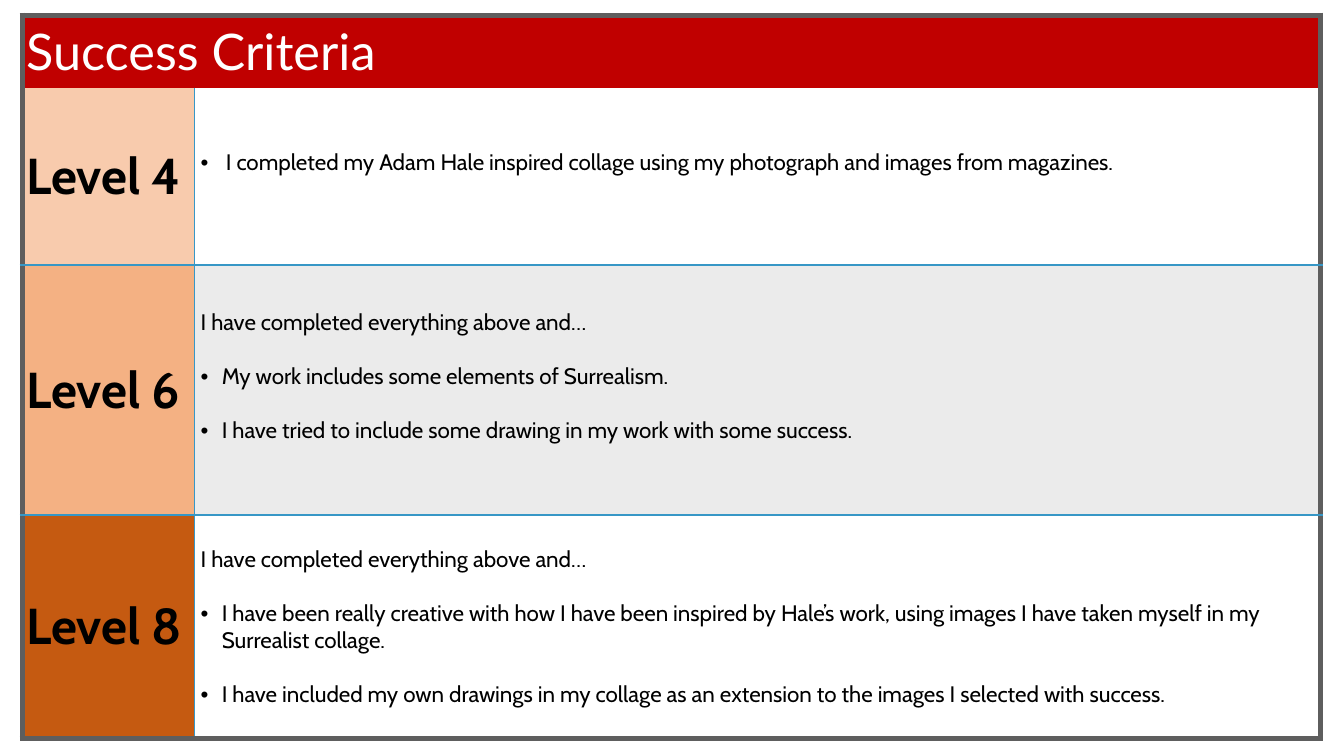
import pptx
import pptx.dml.color
import pptx.enum.text
import pptx.oxml
import pptx.oxml.ns
import pptx.util

Inches, Pt = pptx.util.Inches, pptx.util.Pt
FRAME, RULE = ("5E5E5E", 4), ("3797C6", 1)
NO_GRID_STYLE = "{2D5ABB26-0587-4C30-8999-92F81FD0307C}"
LINE = 0.27
INTRO = "I have completed everything above and…"

LEVELS = [
    ("Level 4", "F8CBAD", None, None, 0.25, [
        "I completed my Adam Hale inspired collage using my photograph and images from magazines.",
    ]),
    ("Level 6", "F4B183", "EBEBEB", INTRO, 0.21, [
        "My work includes some elements of Surrealism.",
        "I have tried to include some drawing in my work with some success.",
    ]),
    ("Level 8", "C55A11", None, INTRO, 0.21, [
        "I have been really creative with how I have been inspired by Hale’s work, "
        "using images I have taken myself in my Surrealist collage.",
        "I have included my own drawings in my collage as an extension to the images "
        "I selected with success.",
    ]),
]


def style_cell(cell, fill, margin, bottom=0, **borders):
    """Set borders (L, R, T, B as colour and width), fill, margins and anchor."""
    properties = cell._tc.get_or_add_tcPr()
    for side in "LRTB":
        color, width = borders.get(side, (None, 0))
        paint = f'<a:solidFill><a:srgbClr val="{color}"/></a:solidFill>' if color else "<a:noFill/>"
        properties.append(pptx.oxml.parse_xml(
            f'<a:ln{side} {pptx.oxml.ns.nsdecls("a")} w="{Pt(width)}">{paint}</a:ln{side}>'))
    if fill:
        cell.fill.solid()
        cell.fill.fore_color.rgb = pptx.dml.color.RGBColor.from_string(fill)
    else:
        cell.fill.background()
    cell.margin_left = cell.margin_right = cell.margin_top = Inches(margin)
    cell.margin_bottom = Inches(margin + bottom)
    cell.vertical_anchor = pptx.enum.text.MSO_ANCHOR.MIDDLE


def write(para, text, size=16, font="Cabin", color="000000", bold=False, before=0, bullet_indent=0):
    span = para.add_run()
    span.text = text
    span.font.size, span.font.name, span.font.bold = Pt(size), font, bold
    span.font.color.rgb = pptx.dml.color.RGBColor.from_string(color)
    para.space_before = Inches(before)
    if bullet_indent:
        properties = para._p.get_or_add_pPr()
        properties.set("marL", str(Inches(bullet_indent)))
        properties.set("indent", str(-Inches(bullet_indent)))
        for bullet in ('<a:buFont {} typeface="Arial"/>', '<a:buChar {} char="•"/>'):
            properties.append(pptx.oxml.parse_xml(bullet.format(pptx.oxml.ns.nsdecls("a"))))


deck = pptx.Presentation()
deck.slide_width, deck.slide_height = Inches(13.33), Inches(7.5)
page = deck.slides.add_slide(deck.slide_layouts[6])

widths, heights = [1.71, 11.17], [0.72, 1.76, 2.48, 2.22]
table = page.shapes.add_table(
    len(heights), len(widths), Inches(0.22), Inches(0.15),
    Inches(sum(widths)), Inches(sum(heights))).table
table.first_row = table.horz_banding = False
table._tbl.tblPr.find(pptx.oxml.ns.qn("a:tableStyleId")).text = NO_GRID_STYLE
for column, width in zip(table.columns, widths):
    column.width = Inches(width)
for row, height in zip(table.rows, heights):
    row.height = Inches(height)

heading = table.cell(0, 0)
heading.merge(table.cell(0, 1))
style_cell(heading, "C00000", 0.04, L=FRAME, R=FRAME, T=FRAME)
style_cell(table.cell(0, 1), "C00000", 0.04, R=FRAME, T=FRAME)
write(heading.text_frame.paragraphs[0], "Success Criteria", size=36, font="Lato", color="FFFFFF")

for number, (level, level_fill, fill, intro, indent, criteria) in enumerate(LEVELS, start=1):
    last = number == len(LEVELS)
    edges = {"B": FRAME if last else RULE}
    if number > 1:
        edges["T"] = RULE

    label = table.cell(number, 0)
    style_cell(label, level_fill, 0.04, L=FRAME, R=RULE, **edges)
    write(label.text_frame.paragraphs[0], level, size=36, bold=True)

    # The upper levels sit one text line above the middle
    detail = table.cell(number, 1)
    style_cell(detail, fill, 0.06, bottom=0 if last else LINE, L=RULE, R=FRAME, **edges)
    para = detail.text_frame.paragraphs[0]
    if intro:
        write(para, intro)
    for criterion in criteria:
        if para.runs:
            para = detail.text_frame.add_paragraph()
        write(para, criterion, before=LINE if intro else 0, bullet_indent=indent)

deck.save("out.pptx")
